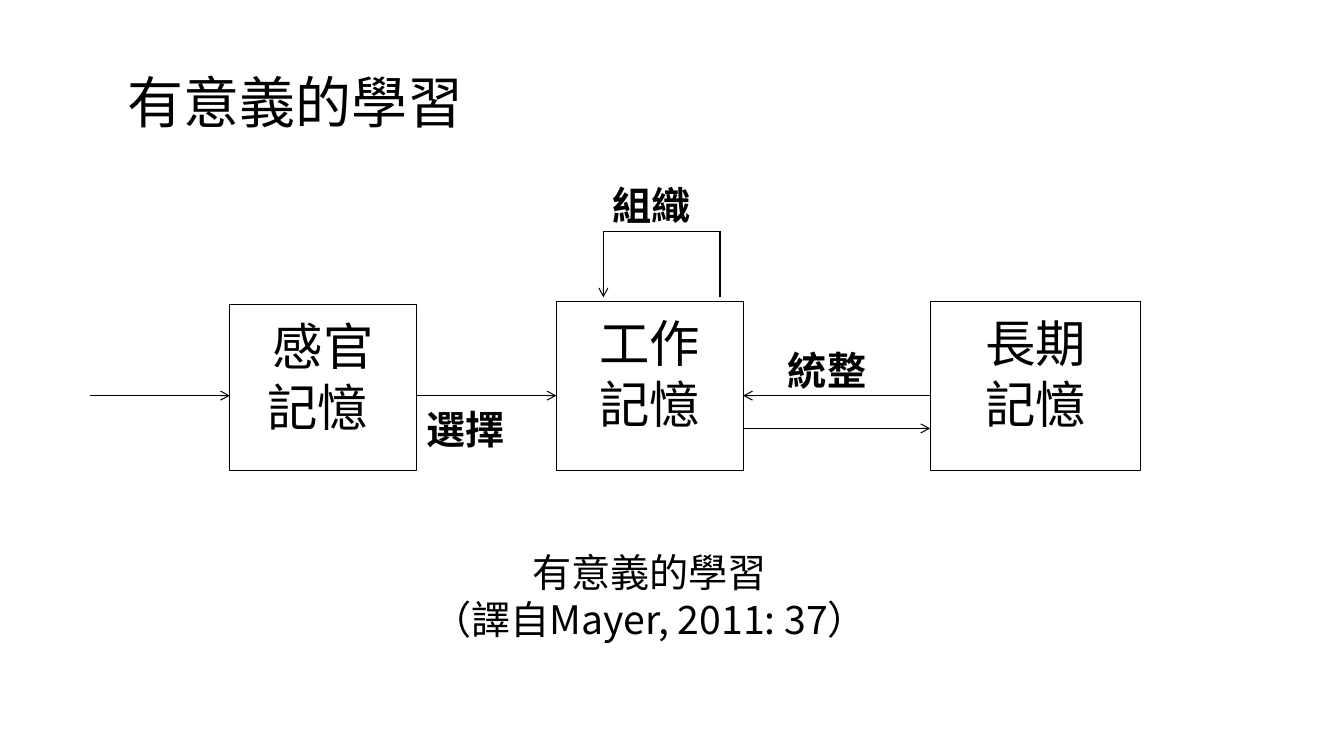
from typing import NamedTuple, Optional

from pptx import Presentation
from pptx.dml.color import RGBColor
from pptx.enum.shapes import MSO_CONNECTOR as Connector, MSO_SHAPE as Preset
from pptx.enum.text import MSO_ANCHOR as Anchor, PP_ALIGN as Align
from pptx.oxml.ns import qn
from pptx.slide import Slide
from pptx.text.text import TextFrame
from pptx.util import Pt
from lxml.etree import SubElement

COLOURS = {"ink": "000000", "paper": "FFFFFF"}
LATIN = "Times New Roman"
TITLE_CJK = "Noto Sans CJK JP"
BODY_CJK = "Noto Sans CJK TC"
FRAME = {
    "word_wrap": True,
    "vertical_anchor": Anchor.TOP,
    "margin_left": Pt(7.2),
    "margin_right": Pt(7.2),
    "margin_top": Pt(7.4),
    "margin_bottom": Pt(3.6),
}


class Panel(NamedTuple):
    lines: tuple[str, ...]
    left: float
    top: float
    width: float
    height: float
    size: float = 28
    spacing: float = 33
    align: Align = Align.LEFT
    bold: bool = False
    outlined: bool = False
    latin: str = LATIN


class Flow(NamedTuple):
    start: tuple[float, float]
    end: tuple[float, float]
    arrow: bool = True


def memory(lines: tuple[str, ...], left: float, top: float, width: float) -> Panel:
    return Panel(lines, left, top, width, MEMORY_BOTTOM - top, 36, 43.6, Align.CENTER, outlined=True)


def process(word: str, left: float, top: float, height: float) -> Panel:
    return Panel((word,), left, top, 83.5, height, bold=True)


MEMORY_BOTTOM = 336.2
SENSORY = memory(("感官", "記憶 "), 164.2, 217.4, 133.4)
WORKING = memory(("工作", "記憶"), 397.4, 215.3, 133.4)
LONG_TERM = memory(("長期", "記憶"), 664.4, 215.3, 150.4)
PANELS = (
    process("選擇", 297.6, 283, 70.6),
    process("組織", 430.6, 122.4, 38.2),
    process("統整", 555.8, 240.5, 35.3),
    SENSORY,
    WORKING,
    LONG_TERM,
    Panel(("有意義的學習", "（譯自Mayer, 2011: 37）"), 230.4, 385.2, 467.3, 70.6,
          align=Align.CENTER, latin=BODY_CJK),
)

MAIN_Y, RETURN_Y = 282.6, 306
LOOP_LEFT, LOOP_RIGHT, LOOP_TOP, LOOP_BOTTOM = 431, 514.3, 165.3, 212.4
SENSORY_RIGHT = SENSORY.left + SENSORY.width
WORKING_RIGHT = WORKING.left + WORKING.width
FLOWS = (
    Flow((64.1, MAIN_Y), (SENSORY.left, MAIN_Y)),
    Flow((SENSORY_RIGHT, MAIN_Y), (WORKING.left, MAIN_Y)),
    Flow((LONG_TERM.left, MAIN_Y), (WORKING_RIGHT, MAIN_Y)),
    Flow((WORKING_RIGHT, RETURN_Y), (LONG_TERM.left, RETURN_Y)),
    Flow((LOOP_RIGHT, LOOP_BOTTOM), (LOOP_RIGHT, LOOP_TOP), False),
    Flow((LOOP_RIGHT, LOOP_TOP), (LOOP_LEFT, LOOP_TOP), False),
    Flow((LOOP_LEFT, LOOP_TOP), (LOOP_LEFT, LOOP_BOTTOM)),
)


def colour(name: str) -> RGBColor:
    return RGBColor.from_string(COLOURS[name])


def apply(target: object, values: dict) -> None:
    for attribute, value in values.items():
        setattr(target, attribute, value)


def write(frame: TextFrame, lines: tuple[str, ...], paragraph_format: dict,
          font_format: dict, cjk: str) -> None:
    for index, line in enumerate(lines):
        paragraph = frame.paragraphs[0] if index == 0 else frame.add_paragraph()
        apply(paragraph, paragraph_format)
        run = paragraph.add_run()
        run.text = line
        run.font.color.rgb = colour("ink")
        apply(run.font, font_format)
        SubElement(run.font._element, qn("a:ea"), typeface=cjk)


def draw_title(slide: Slide) -> None:
    title = slide.shapes.title
    apply(title, {"left": Pt(84), "top": Pt(38), "width": Pt(792), "height": Pt(75)})
    apply(title.text_frame, FRAME | {
        "vertical_anchor": Anchor.MIDDLE, "margin_top": Pt(3.6)})
    write(title.text_frame, ("有意義的學習",),
          {"alignment": Align.LEFT, "line_spacing": 0.9},
          {"size": Pt(40), "name": TITLE_CJK}, TITLE_CJK)


def draw_panel(slide: Slide, panel: Panel) -> None:
    box = slide.shapes.add_shape(
        Preset.RECTANGLE, Pt(panel.left), Pt(panel.top), Pt(panel.width), Pt(panel.height))
    box.shadow.inherit = False
    box.fill.solid()
    box.fill.fore_color.rgb = colour("paper")
    if panel.outlined:
        box.line.color.rgb = colour("ink")
        box.line.width = Pt(0.75)
    else:
        box.line.fill.background()
    apply(box.text_frame, FRAME)
    write(box.text_frame, panel.lines,
          {"alignment": panel.align, "line_spacing": Pt(panel.spacing)},
          {"size": Pt(panel.size), "bold": panel.bold, "name": panel.latin}, BODY_CJK)


def draw_flow(slide: Slide, flow: Flow) -> None:
    link = slide.shapes.add_connector(
        Connector.STRAIGHT, *(Pt(value) for value in flow.start + flow.end))
    link.line.color.rgb = colour("ink")
    link.line.width = Pt(0.75)
    if flow.arrow:
        SubElement(link.line._get_or_add_ln(), qn("a:tailEnd"), type="arrow")
    SubElement(link._element.spPr, qn("a:effectLst"))


def main(size: Optional[tuple[float, float]] = (960, 540)) -> None:
    deck = Presentation()
    deck.slide_width, deck.slide_height = (Pt(side) for side in size)
    slide = deck.slides.add_slide(deck.slide_layouts[5])
    draw_title(slide)
    for panel in PANELS:
        draw_panel(slide, panel)
    for flow in FLOWS:
        draw_flow(slide, flow)
    deck.save("out.pptx")


if __name__ == "__main__":
    main()
